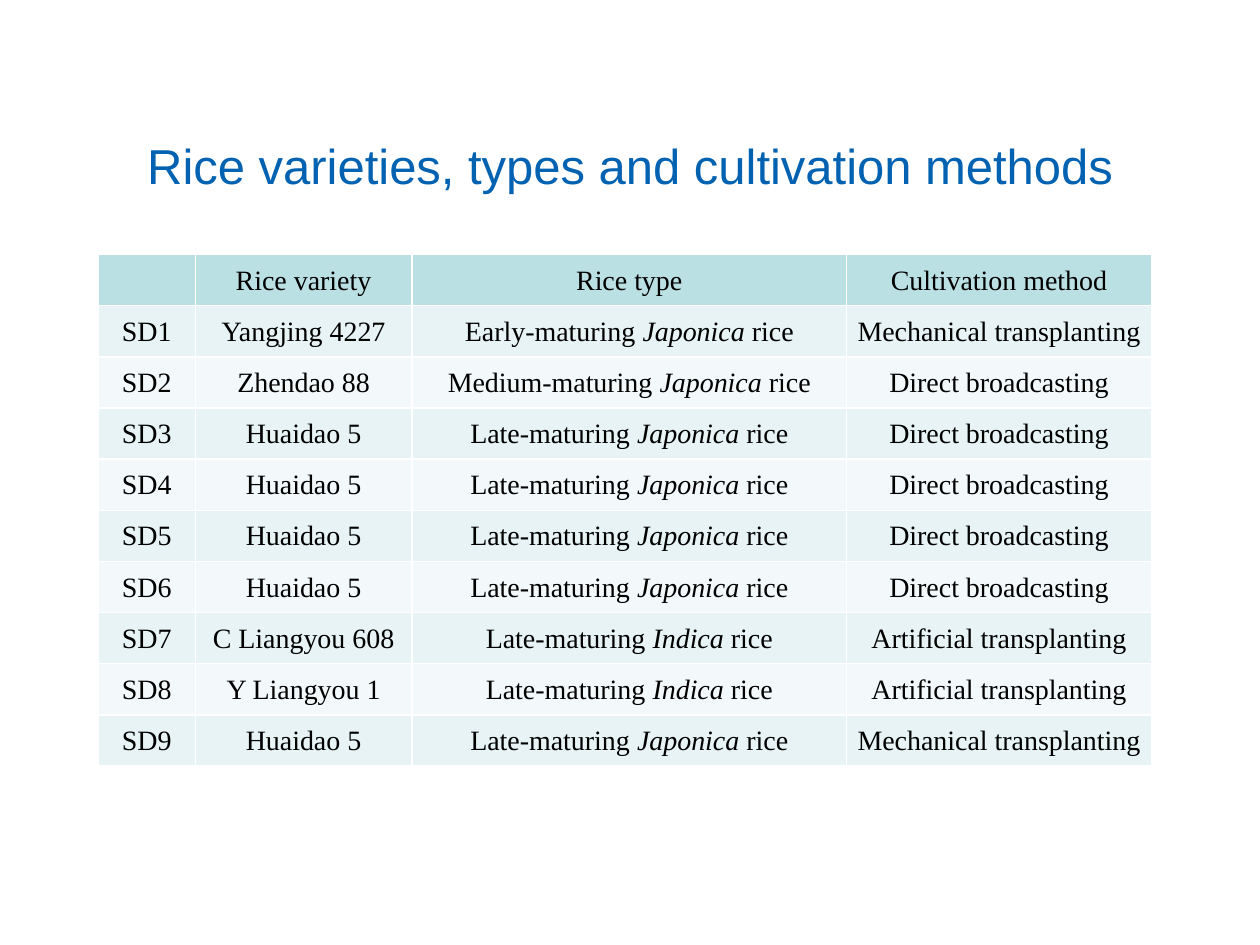
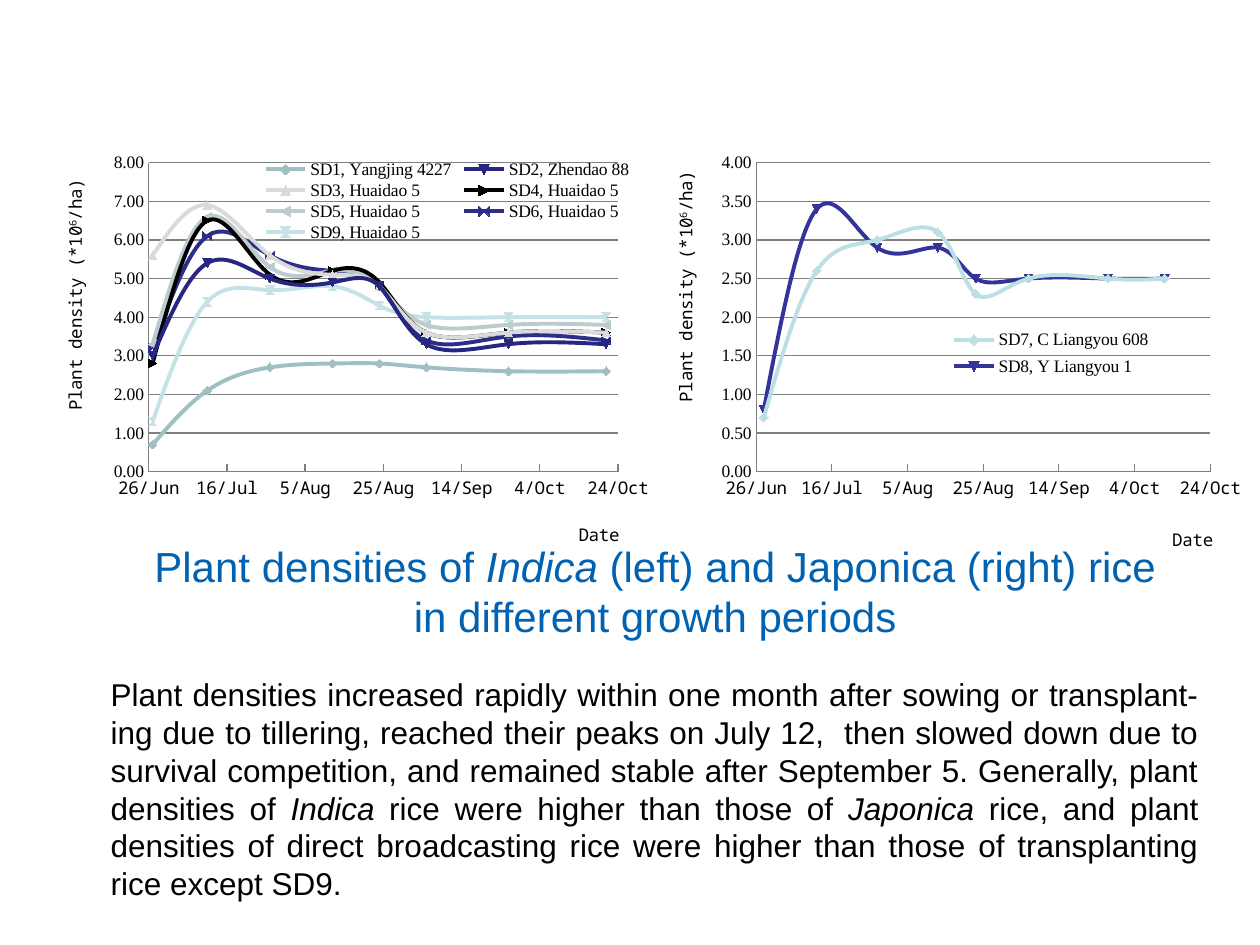
import dataclasses

import lxml.etree
import pptx
import pptx.chart.data
import pptx.dml.color
import pptx.enum.chart
import pptx.enum.text
import pptx.oxml.ns
import pptx.util

RGBColor = pptx.dml.color.RGBColor
Align = pptx.enum.text.PP_ALIGN
Anchor = pptx.enum.text.MSO_ANCHOR

TITLE_BLUE = RGBColor(0x00, 0x62, 0xB1)
BLACK = RGBColor(0x00, 0x00, 0x00)
GRID_GREY = RGBColor(0x80, 0x80, 0x80)
HEADER_TEAL = RGBColor(0xBB, 0xE0, 0xE3)
ODD_ROW = RGBColor(0xE7, 0xF3, 0xF4)
EVEN_ROW = RGBColor(0xF3, 0xF9, 0xFA)
DARK_TEAL = RGBColor(0x9F, 0xBF, 0xC2)
DARK_NAVY = RGBColor(0x27, 0x27, 0x82)
NAVY = RGBColor(0x2D, 0x2D, 0x8A)
INDIGO = RGBColor(0x33, 0x33, 0x99)
SILVER = RGBColor(0xDA, 0xDA, 0xDA)
GREY_TEAL = RGBColor(0xBA, 0xCC, 0xCD)
PALE_TEAL = RGBColor(0xC5, 0xE3, 0xE6)

SANS, SERIF, MONO = "Arial", "Times New Roman", "Noto Sans Mono"
SLIDE_WIDTH, SLIDE_HEIGHT = pptx.util.Inches(10), pptx.util.Inches(7.5)
GRID_UNIT = SLIDE_WIDTH // 100
FIRST_DAY, LAST_DAY = 40720, 40840

HEADINGS = ["", "Rice variety", "Rice type", "Cultivation method"]
COLUMN_WIDTHS = [7.7, 17.2, 34.5, 24.2]
LATE_JAPONICA = "Late-maturing *Japonica* rice"
LATE_INDICA = "Late-maturing *Indica* rice"
FIELDS = [
    ("Yangjing 4227", "Early-maturing *Japonica* rice", "Mechanical transplanting"),
    ("Zhendao 88", "Medium-maturing *Japonica* rice", "Direct broadcasting"),
    *[("Huaidao 5", LATE_JAPONICA, "Direct broadcasting")] * 4,
    ("C Liangyou 608", LATE_INDICA, "Artificial transplanting"),
    ("Y Liangyou 1", LATE_INDICA, "Artificial transplanting"),
    ("Huaidao 5", LATE_JAPONICA, "Mechanical transplanting"),
]
DISCUSSION = (
    "Plant densities increased rapidly within one month after sowing or "
    "transplant-ing due to tillering, reached their peaks on July 12,  then "
    "slowed down due to survival competition, and remained stable after "
    "September 5. Generally, plant densities of *Indica* rice were higher than "
    "those of *Japonica *rice, and plant densities of direct broadcasting rice "
    "were higher than those of transplanting rice except SD9."
)


@dataclasses.dataclass
class Box:
    column: float
    row: float
    columns: float
    rows: float

    def place(self):
        return [round(n * GRID_UNIT) for n in (self.column, self.row, self.columns, self.rows)]


@dataclasses.dataclass
class DensityChart:
    sample_days: list
    densities: dict
    top: float
    step: float
    plot: tuple
    legend: tuple
    date_title: tuple
    density_title: tuple


JAPONICA_CHART = DensityChart(
    sample_days=[1, 15, 31, 47, 59, 71, 92, 117],
    densities={
        "SD1, Yangjing 4227": (DARK_TEAL, [0.7, 2.1, 2.7, 2.8, 2.8, 2.7, 2.6, 2.6]),
        "SD2, Zhendao 88": (DARK_NAVY, [3, 5.4, 5, 4.9, 4.8, 3.3, 3.3, 3.3]),
        "SD3, Huaidao 5": (SILVER, [5.6, 6.9, 5.6, 5.1, 4.8, 3.6, 3.6, 3.6]),
        "SD4, Huaidao 5": (BLACK, [2.8, 6.5, 5.1, 5.2, 4.9, 3.6, 3.6, 3.6]),
        "SD5, Huaidao 5": (GREY_TEAL, [3.3, 6.6, 5.3, 5.2, 4.8, 3.8, 3.8, 3.8]),
        "SD6, Huaidao 5": (NAVY, [3.2, 6.1, 5.6, 5.2, 4.8, 3.4, 3.5, 3.4]),
        "SD9, Huaidao 5": (PALE_TEAL, [1.3, 4.4, 4.7, 4.8, 4.3, 4, 4, 4]),
    },
    top=8, step=1,
    plot=(0.18, 0.06, 0.77, 0.73), legend=(0.36, 0.05, 0.62, 0.2),
    date_title=(0.88, 0.9), density_title=(0.03, 0.09),
)
INDICA_CHART = DensityChart(
    sample_days=[2, 16, 32, 48, 58, 72, 93, 108],
    densities={
        "SD7, C Liangyou 608": (HEADER_TEAL, [0.7, 2.6, 3, 3.1, 2.3, 2.5, 2.5, 2.5]),
        "SD8, Y Liangyou 1": (INDIGO, [0.8, 3.4, 2.9, 2.9, 2.5, 2.5, 2.5, 2.5]),
    },
    top=4, step=0.5,
    plot=(0.18, 0.06, 0.77, 0.73), legend=(0.5, 0.44, 0.36, 0.14),
    date_title=(0.88, 0.91), density_title=(0.03, 0.07),
)


def set_font(font, name, size, color):
    font.name = name
    font.size = pptx.util.Pt(size)
    font.color.rgb = color
    font.bold = False


def add_text(para, text, name, size, color, align):
    para.alignment = align
    for index, piece in enumerate(text.split("*")):
        if piece:
            span = para.add_run()
            span.text = piece
            set_font(span.font, name, size, color)
            span.font.italic = index % 2 == 1


def add_title(page, box, lines, size):
    title = page.shapes.title
    title.left, title.top, title.width, title.height = box.place()
    title.text_frame.vertical_anchor = Anchor.MIDDLE
    para = title.text_frame.paragraphs[0]
    for index, line in enumerate(lines):
        if index:
            para.add_line_break()
        add_text(para, line, SANS, size, TITLE_BLUE, Align.CENTER)


def add_variety_table(page, box):
    rows = [HEADINGS] + [(f"SD{n}", *field) for n, field in enumerate(FIELDS, 1)]
    table = page.shapes.add_table(len(rows), len(HEADINGS), *box.place()).table
    for column, width in zip(table.columns, COLUMN_WIDTHS):
        column.width = round(box.columns * GRID_UNIT * width / sum(COLUMN_WIDTHS))
    for row_index, texts in enumerate(rows):
        fill = HEADER_TEAL if row_index == 0 else (EVEN_ROW, ODD_ROW)[row_index % 2]
        for column_index, text in enumerate(texts):
            cell = table.cell(row_index, column_index)
            cell.fill.solid()
            cell.fill.fore_color.rgb = fill
            cell.vertical_anchor = Anchor.MIDDLE
            cell.margin_left = cell.margin_right = cell.margin_top = pptx.util.Inches(0.01)
            cell.margin_bottom = 0
            add_text(cell.text_frame.paragraphs[0], text, SERIF, 16, BLACK, Align.CENTER)


def set_layout(element, index, shares, inner=False):
    tag = pptx.oxml.ns.qn
    for old in element.findall(tag("c:layout")):
        element.remove(old)
    layout = lxml.etree.Element(tag("c:layout"))
    manual = lxml.etree.SubElement(layout, tag("c:manualLayout"))
    settings = [("layoutTarget", "inner")] if inner else []
    settings += [("xMode", "edge"), ("yMode", "edge")]
    settings += zip("xywh", shares)
    for name, value in settings:
        lxml.etree.SubElement(manual, tag(f"c:{name}")).set("val", str(value))
    element.insert(index, layout)


def add_axis_title(axis, pieces, corner):
    axis.has_title = True
    frame = axis.axis_title.text_frame
    para = frame.paragraphs[0]
    for text, raised in pieces:
        span = para.add_run()
        span.text = text
        set_font(span.font, MONO, 10, BLACK)
        if raised:
            span._r.get_or_add_rPr().set("baseline", "30000")
    set_layout(axis.axis_title._element, 1, corner)
    return frame


def format_axis(axis, low, high, step, number_format, font_name):
    axis.minimum_scale, axis.maximum_scale, axis.major_unit = low, high, step
    axis.major_tick_mark = pptx.enum.chart.XL_TICK_MARK.INSIDE
    axis.minor_tick_mark = pptx.enum.chart.XL_TICK_MARK.NONE
    axis.tick_labels.number_format = number_format
    axis.tick_labels.number_format_is_linked = False
    set_font(axis.tick_labels.font, font_name, 10, BLACK)
    axis.format.line.color.rgb = GRID_GREY


def add_density_chart(page, box, spec_sheet):
    data = pptx.chart.data.XyChartData()
    for name, (color, densities) in spec_sheet.densities.items():
        series = data.add_series(name)
        for day, density in zip(spec_sheet.sample_days, densities):
            series.add_data_point(FIRST_DAY + day, density)
    kind = pptx.enum.chart.XL_CHART_TYPE.XY_SCATTER_SMOOTH
    chart = page.shapes.add_chart(kind, *box.place(), data).chart
    chart.has_title = False
    set_font(chart.font, SANS, 10, BLACK)

    dates, values = chart.category_axis, chart.value_axis
    format_axis(dates, FIRST_DAY, LAST_DAY, 20, "d/mmm", MONO)
    dates.has_major_gridlines = False
    add_axis_title(dates, [("Date", False)], spec_sheet.date_title)
    format_axis(values, 0, spec_sheet.top, spec_sheet.step, "0.00", SERIF)
    values.has_major_gridlines = True
    values.major_gridlines.format.line.color.rgb = GRID_GREY
    label = [("Plant density (*10", False), ("6", True), ("/ha)", False)]
    frame = add_axis_title(values, label, spec_sheet.density_title)
    frame._txBody.bodyPr.set("rot", "-5400000")
    frame._txBody.bodyPr.set("vert", "horz")

    chart.has_legend = True
    chart.legend.include_in_layout = True
    set_font(chart.legend.font, SERIF, 10, BLACK)
    set_layout(chart.legend._element, 1, spec_sheet.legend)
    set_layout(chart._chartSpace.chart.plotArea, 0, spec_sheet.plot, inner=True)

    plot = chart.plots[0]
    plot.vary_by_categories = False
    for series, (color, densities) in zip(plot.series, spec_sheet.densities.values()):
        series.format.line.color.rgb = color
        series.format.line.width = pptx.util.Pt(2.25)
        series.marker.style = pptx.enum.chart.XL_MARKER_STYLE.AUTOMATIC
        series.marker.size = 5
        series.marker.format.fill.solid()
        series.marker.format.fill.fore_color.rgb = color
        series.marker.format.line.color.rgb = color
        for smooth in series._element.xpath("c:smooth"):
            smooth.set("val", "1")


def add_discussion(page, box):
    frame = page.shapes.add_textbox(*box.place()).text_frame
    frame.word_wrap = True
    add_text(frame.paragraphs[0], DISCUSSION, SANS, 18, BLACK, Align.JUSTIFY)


def add_variety_page(deck):
    page = deck.slides.add_slide(deck.slide_layouts[5])
    add_title(page, Box(5, 7.6, 90, 11), ["Rice varieties, types and cultivation methods"], 28)
    add_variety_table(page, Box(7.8, 20.2, 83.6, 40.6))


def add_density_page(deck):
    page = deck.slides.add_slide(deck.slide_layouts[5])
    lines = ["Plant densities of *Indica *(left) and Japonica (right) rice",
             "in different growth periods"]
    add_title(page, Box(7, 43, 90, 7.8), lines, 24)
    add_density_chart(page, Box(3.1, 10.9, 48.4, 33.6), JAPONICA_CHART)
    add_density_chart(page, Box(51.6, 10.9, 46.9, 33.6), INDICA_CHART)
    add_discussion(page, Box(7.8, 53.1, 88.3, 19.2))


def main():
    deck = pptx.Presentation()
    deck.slide_width, deck.slide_height = SLIDE_WIDTH, SLIDE_HEIGHT
    add_variety_page(deck)
    add_density_page(deck)
    deck.save("out.pptx")


if __name__ == "__main__":
    main()
